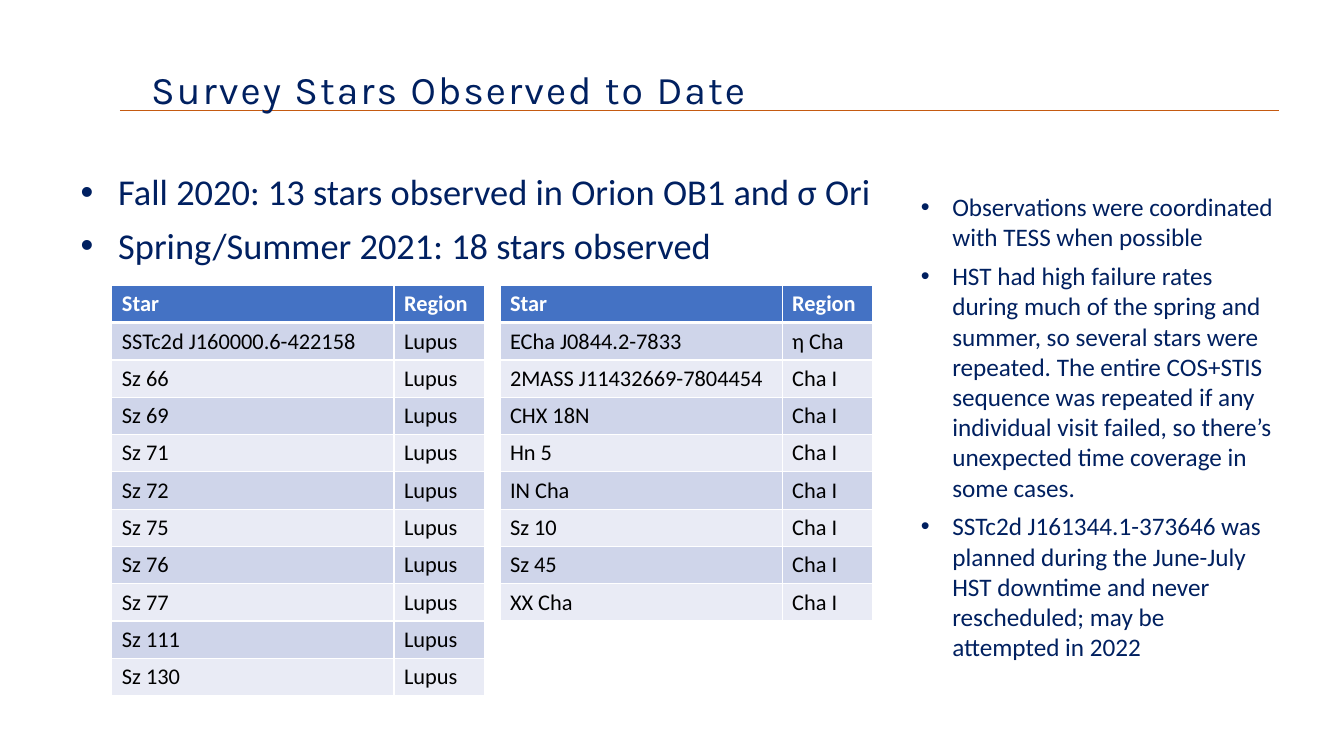
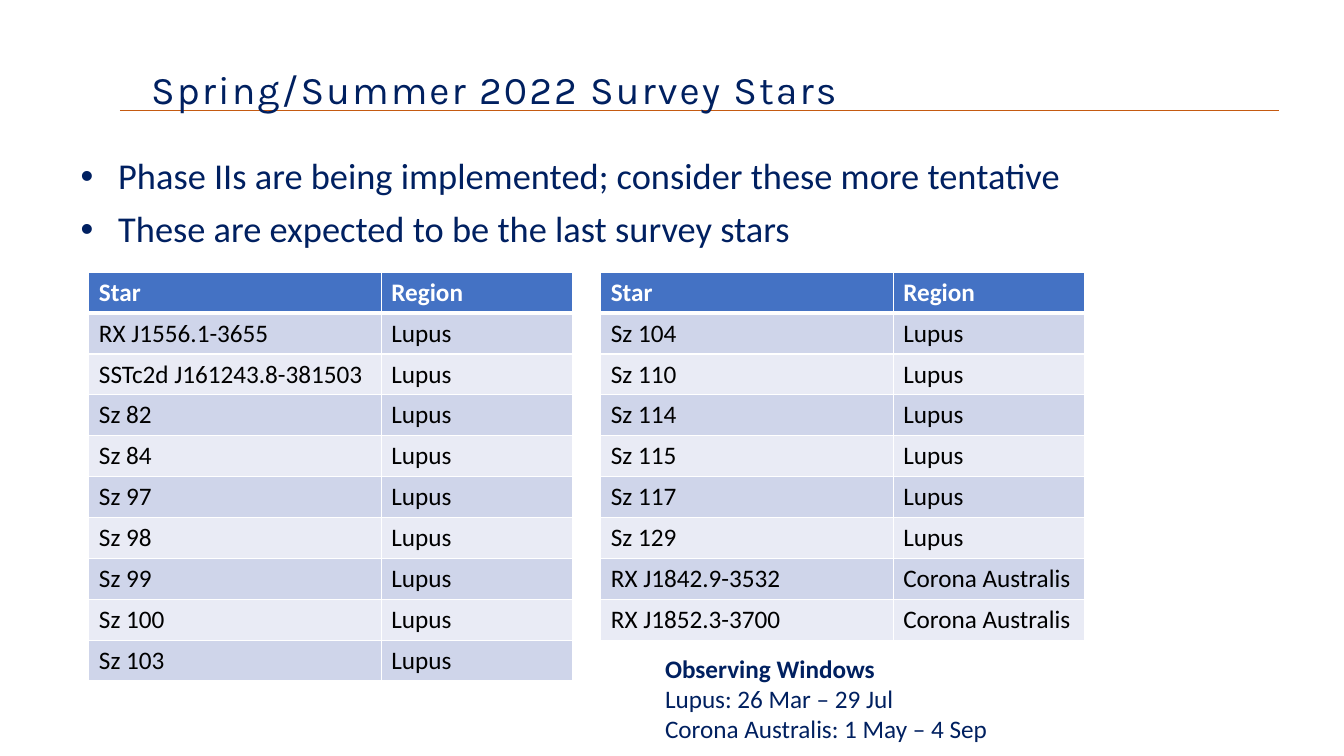
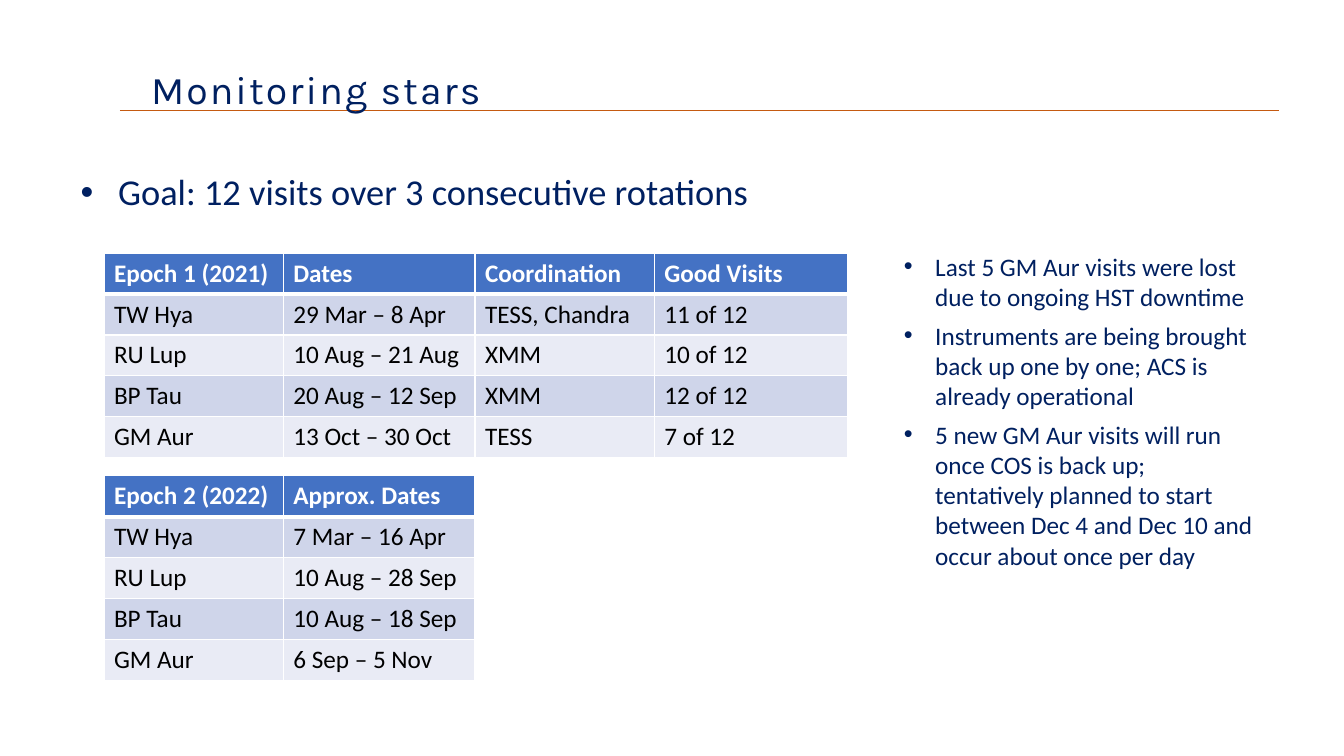
from dataclasses import dataclass

from lxml import etree
from pptx import Presentation
from pptx.dml.color import RGBColor
from pptx.enum.shapes import MSO_CONNECTOR
from pptx.enum.text import MSO_ANCHOR
from pptx.oxml.ns import qn
from pptx.util import Cm, Pt

STRAIGHT = MSO_CONNECTOR.STRAIGHT
MIDDLE, TOP = MSO_ANCHOR.MIDDLE, MSO_ANCHOR.TOP
BLANK = 6


@dataclass(frozen=True)
class Theme:
    navy: str = "002060"
    body_navy: str = "002061"
    rule: str = "C55A11"
    header: str = "4472C4"
    bands: tuple = ("CFD5EA", "E9EBF5")
    white: str = "FFFFFF"
    black: str = "000000"
    title_font: str = "Karla"
    font: str = "Calibri"
    title_size: int = 28
    body_size: int = 26
    note_size: int = 18
    small_table_size: int = 16


THEME = Theme()
BULLET = "•"
HEADER_LINE, CELL_LINE = 3, 1
COMPACT_ROW, ROW = 0.94, 1.03
STAR_HEADER = ("Star", "Region")

TITLE_STYLE = dict(size=THEME.title_size, color=THEME.navy, name=THEME.title_font)
BODY_STYLE = dict(size=THEME.body_size, color=THEME.body_navy)
NOTE_STYLE = dict(size=THEME.note_size, color=THEME.navy)
BODY_FORMAT = dict(line_spacing=0.9, space_before=Pt(10))
NOTE_FORMAT = dict(space_after=Pt(6))


def style_font(font, size, color, name=THEME.font, bold=False):
    for key, value in dict(size=Pt(size), name=name, bold=bold).items():
        setattr(font, key, value)
    font.color.rgb = RGBColor.from_string(color)


def add_bullet(p, indent):
    """Give the paragraph a bullet with a hanging indent in centimetres."""
    pPr = p._p.get_or_add_pPr()
    pPr.set("marL", str(Cm(indent)))
    pPr.set("indent", str(-Cm(indent)))
    etree.SubElement(pPr, qn("a:buFont")).set("typeface", "Arial")
    etree.SubElement(pPr, qn("a:buChar")).set("char", BULLET)


def add_text(s, box, lines, style, indent=0, formats=None, anchor=TOP, bold_first=False):
    """Write one paragraph per line; box is left, top, width, height in cm."""
    tf = s.shapes.add_textbox(*map(Cm, box)).text_frame
    tf.word_wrap = True
    tf.vertical_anchor = anchor
    for i, line in enumerate(lines):
        p = tf.add_paragraph() if i else tf.paragraphs[0]
        if indent:
            add_bullet(p, indent)
        for key, value in (formats or {}).items():
            if i or key != "space_before":
                setattr(p, key, value)
        r = p.add_run()
        r.text = line
        style_font(r.font, bold=bold_first and i == 0, **style)
    return tf


def add_body(s, lines, top=4.27):
    add_text(s, (1.78, top, 31.29, 13.79), lines, BODY_STYLE, 0.95, BODY_FORMAT)


def add_notes(s, left, top, height, lines):
    add_text(s, (left, top, 9.4, height), lines, NOTE_STYLE, 0.79, NOTE_FORMAT)


def add_slide(prs, title):
    """Start a slide with the shared rule and title."""
    s = prs.slides.add_slide(prs.slide_layouts[BLANK])
    rule = s.shapes.add_connector(STRAIGHT, Cm(3.02), Cm(2.77), Cm(32.23), Cm(2.77))
    rule.line.color.rgb = RGBColor.from_string(THEME.rule)
    rule.line.width = Pt(0.5)
    etree.SubElement(rule._element.spPr, qn("a:effectLst"))
    tf = add_text(s, (3.56, 1.45, 29.03, 1.73), [title], TITLE_STYLE,
                  formats=dict(line_spacing=0.9), anchor=MIDDLE)
    tf.paragraphs[0].runs[0]._r.get_or_add_rPr().set("spc", "150")
    return s


def add_borders(cell, top, bottom):
    widths = dict(lnL=CELL_LINE, lnR=CELL_LINE, lnT=top, lnB=bottom)
    tcPr = cell._tc.get_or_add_tcPr()
    for i, (side, width) in enumerate(widths.items()):
        ln = etree.Element(qn(f"a:{side}"), w=str(Pt(width)))
        fill = etree.SubElement(ln, qn("a:solidFill"))
        etree.SubElement(fill, qn("a:srgbClr")).set("val", THEME.white)
        tcPr.insert(i, ln)


def style_cell(cell, row, size):
    is_header = row == 0
    fill = THEME.header if is_header else THEME.bands[(row - 1) % 2]
    cell.fill.solid()
    cell.fill.fore_color.rgb = RGBColor.from_string(fill)
    add_borders(cell, HEADER_LINE if row == 1 else CELL_LINE,
                HEADER_LINE if is_header else CELL_LINE)
    style_font(cell.text_frame.paragraphs[0].runs[0].font, size,
               THEME.white if is_header else THEME.black, bold=is_header)


def add_table(s, left, top, widths, rows, row_height=ROW, size=THEME.note_size):
    table = s.shapes.add_table(len(rows), len(widths), Cm(left), Cm(top),
                               Cm(sum(widths)), Cm(row_height * len(rows))).table
    table.horz_banding = False
    for column, width in zip(table.columns, widths):
        column.width = Cm(width)
    for i, values in enumerate(rows):
        table.rows[i].height = Cm(row_height)
        for j, value in enumerate(values):
            cell = table.cell(i, j)
            cell.text = value
            style_cell(cell, i, size)


def add_star_tables(s, left, top, widths, gap, groups, **options):
    """Set tables of (star, region) rows side by side."""
    for i, stars in enumerate(groups):
        add_table(s, left + i * (sum(widths) + gap), top, widths,
                  [STAR_HEADER, *stars], **options)


def in_region(region, *stars):
    return [(star, region) for star in stars]


def build_observed(prs):
    s = add_slide(prs, "Survey Stars Observed to Date")
    add_body(s, ["Fall 2020: 13 stars observed in Orion OB1 and σ Ori",
                 "Spring/Summer 2021: 18 stars observed"])
    lupus = in_region("Lupus", "SSTc2d J160000.6-422158", "Sz 66", "Sz 69", "Sz 71",
                      "Sz 72", "Sz 75", "Sz 76", "Sz 77", "Sz 111", "Sz 130")
    chamaeleon = in_region("η Cha", "ECha J0844.2-7833") + in_region(
        "Cha I", "2MASS J11432669-7804454", "CHX 18N", "Hn 5", "IN Cha",
        "Sz 10", "Sz 45", "XX Cha")
    add_star_tables(s, 2.82, 7.19, (7.11, 2.29), 0.38, (lupus, chamaeleon),
                    row_height=COMPACT_ROW, size=THEME.small_table_size)
    add_notes(s, 22.96, 4.7, 12.22, [
        "Observations were coordinated with TESS when possible",
        "HST had high failure rates during much of the spring and summer, so several "
        "stars were repeated. The entire COS+STIS sequence was repeated if any "
        "individual visit failed, so there’s unexpected time coverage in some cases.",
        "SSTc2d J161344.1-373646 was planned during the June-July HST downtime and "
        "never rescheduled; may be attempted in 2022"])


def build_upcoming(prs):
    s = add_slide(prs, "Spring/Summer 2022 Survey Stars")
    add_body(s, ["Phase IIs are being implemented; consider these more tentative",
                 "These are expected to be the last survey stars"], top=3.86)
    first = in_region("Lupus", "RX J1556.1-3655", "SSTc2d J161243.8-381503", "Sz 82",
                      "Sz 84", "Sz 97", "Sz 98", "Sz 99", "Sz 100", "Sz 103")
    second = in_region("Lupus", "Sz 104", "Sz 110", "Sz 114", "Sz 115", "Sz 117",
                       "Sz 129") + in_region("Corona Australis", "RX J1842.9-3532",
                                             "RX J1852.3-3700")
    add_star_tables(s, 2.24, 6.86, (7.37, 4.83), 0.7, (first, second))
    add_text(s, (16.51, 16.33, 9.98, 2.57),
             ["Observing Windows", "Lupus: 26 Mar – 29 Jul",
              "Corona Australis: 1 May – 4 Sep"], NOTE_STYLE, bold_first=True)


def build_monitoring(prs):
    s = add_slide(prs, "Monitoring stars")
    add_body(s, ["Goal: 12 visits over 3 consecutive rotations"])
    add_notes(s, 22.53, 6.2, 8.38, [
        "Last 5 GM Aur visits were lost due to ongoing HST downtime",
        "Instruments are being brought back up one by one; ACS is already operational",
        "5 new GM Aur visits will run once COS is back up; tentatively planned to "
        "start between Dec 4 and Dec 10 and occur about once per day"])
    widths = (4.52, 4.83, 4.52, 4.88)
    add_table(s, 2.62, 6.38, widths, [
        ("Epoch 1 (2021)", "Dates", "Coordination", "Good Visits"),
        ("TW Hya", "29 Mar – 8 Apr", "TESS, Chandra", "11 of 12"),
        ("RU Lup", "10 Aug – 21 Aug", "XMM", "10 of 12"),
        ("BP Tau", "20 Aug – 12 Sep", "XMM", "12 of 12"),
        ("GM Aur", "13 Oct – 30 Oct", "TESS", "7 of 12")])
    add_table(s, 2.62, 11.99, widths[:2], [
        ("Epoch 2 (2022)", "Approx. Dates"),
        ("TW Hya", "7 Mar – 16 Apr"),
        ("RU Lup", "10 Aug – 28 Sep"),
        ("BP Tau", "10 Aug – 18 Sep"),
        ("GM Aur", "6 Sep – 5 Nov")])


def main():
    prs = Presentation()
    prs.slide_width, prs.slide_height = Cm(33.87), Cm(19.05)
    for build in (build_observed, build_upcoming, build_monitoring):
        build(prs)
    prs.save("out.pptx")


if __name__ == "__main__":
    main()
